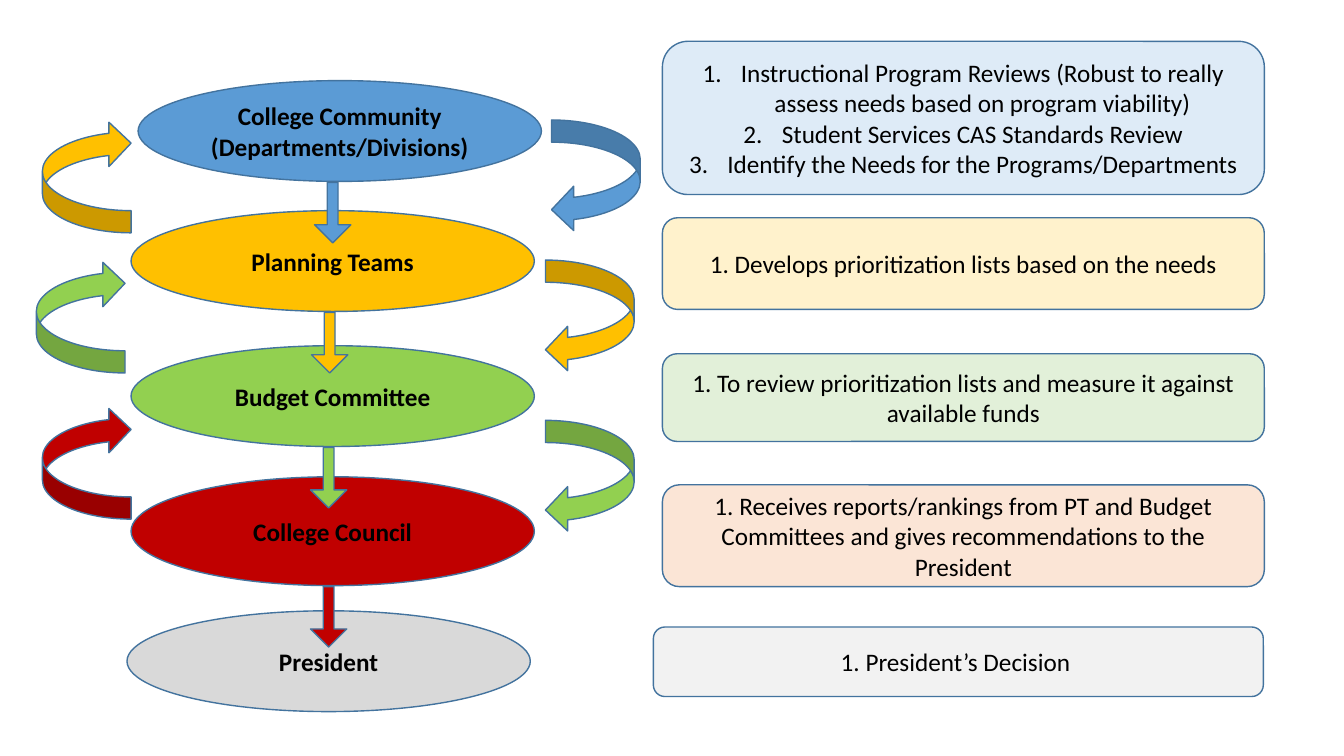
from dataclasses import dataclass

from lxml import etree
from pptx import Presentation
from pptx.dml.color import RGBColor
from pptx.enum.shapes import MSO_SHAPE
from pptx.enum.text import MSO_ANCHOR, PP_ALIGN
from pptx.oxml.ns import qn
from pptx.util import Inches, Pt

ELLIPSE = MSO_SHAPE.OVAL
ROUNDED = MSO_SHAPE.ROUNDED_RECTANGLE
DOWN_ARROW = MSO_SHAPE.DOWN_ARROW
CURVED_ARROW = MSO_SHAPE.CURVED_LEFT_ARROW
MIDDLE = MSO_ANCHOR.MIDDLE
CENTER = PP_ALIGN.CENTER

FONT = "Calibri"
TEXT_SIZE = 18
LIST_INDENT = 0.38
COLORS = {
    "outline": "43739E",
    "text": "000000",
    "blue": "5B9BD5",
    "gold": "FFC000",
    "green": "92D050",
    "red": "C00000",
    "gray": "D9D9D9",
    "pale blue": "DEEBF7",
    "pale gold": "FFF2CC",
    "pale green": "E2F0D9",
    "pale red": "FBE5D6",
    "pale gray": "F2F2F2",
}


@dataclass
class Box:
    left: float
    top: float
    width: float
    height: float


STAGES = [
    ("College Community (Departments/Divisions)", "blue", Box(1.37, 0.8, 4, 1)),
    ("Planning Teams", "gold", Box(1.3, 2.09, 4, 1)),
    ("Budget Committee", "green", Box(1.3, 3.43, 4, 1)),
    ("College Council", "red", Box(1.3, 4.73, 4, 1.08)),
    ("President", "gray", Box(1.26, 6.06, 4, 1)),
]
DUTIES = [
    ([
        "Instructional Program Reviews (Robust to really assess needs based on program viability)",
        "Student Services CAS Standards Review",
        "Identify the Needs for the Programs/Departments",
    ], "pale blue", Box(6.57, 0.41, 5.97, 1.52)),
    (["1. Develops prioritization lists based on the needs"],
     "pale gold", Box(6.57, 2.16, 5.97, 0.91)),
    (["1. To review prioritization lists and measure it against available funds"],
     "pale green", Box(6.57, 3.51, 5.97, 0.87)),
    (["1. Receives reports/rankings from PT and Budget Committees and gives "
      "recommendations to the President"],
     "pale red", Box(6.57, 4.81, 5.97, 1.01)),
    (["1. President’s Decision "], "pale gray", Box(6.48, 6.22, 6.05, 0.69)),
]
DOWN_ARROWS = [
    ("blue", 3.12, 1.81),
    ("gold", 3.09, 3.1),
    ("green", 3.08, 4.44),
    ("red", 3.08, 5.82),
]
FORWARD_LOOPS = [("blue", 5.47, 1.19), ("gold", 5.41, 2.58), ("green", 5.41, 4.17)]
RETURN_LOOPS = [("gold", 0.42, 1.2), ("green", 0.36, 2.59), ("red", 0.42, 4.04)]


def rgb(name):
    return RGBColor.from_string(COLORS[name])


def add_outlined(page, kind, box, color):
    shape = page.shapes.add_shape(
        kind, Inches(box.left), Inches(box.top), Inches(box.width), Inches(box.height))
    shape.shadow.inherit = False
    shape.fill.solid()
    shape.fill.fore_color.rgb = rgb(color)
    shape.line.color.rgb = rgb("outline")
    shape.line.width = Pt(1)
    return shape


def number(para):
    properties = para._p.get_or_add_pPr()
    properties.set("marL", str(Inches(LIST_INDENT)))
    properties.set("indent", str(-Inches(LIST_INDENT)))
    etree.SubElement(properties, qn("a:buFont"), typeface="+mj-lt")
    etree.SubElement(properties, qn("a:buAutoNum"), type="arabicPeriod")


def write(shape, lines, bold=False):
    frame = shape.text_frame
    frame.word_wrap = True
    frame.vertical_anchor = MIDDLE
    for index, line in enumerate(lines):
        para = frame.paragraphs[0] if index == 0 else frame.add_paragraph()
        para.alignment = CENTER
        if len(lines) > 1:
            number(para)
        span = para.add_run()
        span.text = line
        span.font.name = FONT
        span.font.size = Pt(TEXT_SIZE)
        span.font.bold = bold
        span.font.color.rgb = rgb("text")


def add_stage(page, box, label, color):
    write(add_outlined(page, ELLIPSE, box, color), [label], bold=True)


def add_duties(page, box, lines, color):
    write(add_outlined(page, ROUNDED, box, color), lines)


def add_down_arrow(page, box, color):
    arrow = add_outlined(page, DOWN_ARROW, box, color)
    arrow.adjustments[0] = 0.296


def add_loop(page, box, color, rotation):
    add_outlined(page, CURVED_ARROW, box, color).rotation = rotation


def build_process_page(page):
    for label, color, box in STAGES:
        add_stage(page, box, label, color)
    for lines, color, box in DUTIES:
        add_duties(page, box, lines, color)
    for color, left, top in DOWN_ARROWS:
        add_down_arrow(page, Box(left, top, 0.36, 0.6), color)
    for loops, rotation in ((FORWARD_LOOPS, 0), (RETURN_LOOPS, 180)):
        for color, left, top in loops:
            add_loop(page, Box(left, top, 0.88, 1.11), color, rotation)


def main():
    deck = Presentation()
    deck.slide_width = Inches(13.33)
    deck.slide_height = Inches(7.5)
    build_process_page(deck.slides.add_slide(deck.slide_layouts[6]))
    deck.save("out.pptx")


if __name__ == "__main__":
    main()
